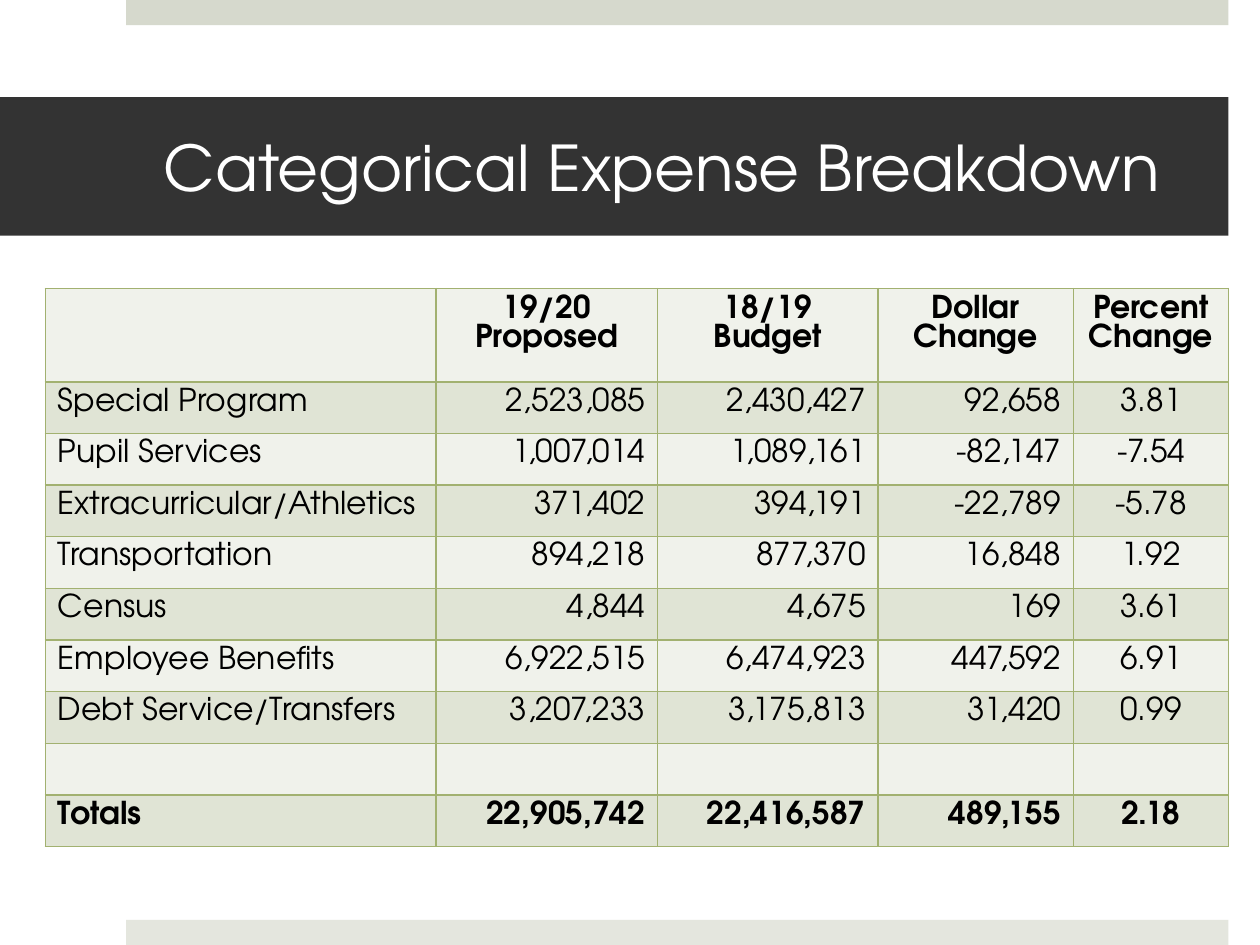
"""Build the categorical expense breakdown slide."""
from dataclasses import dataclass

from lxml import etree
from pptx import Presentation
from pptx.dml.color import RGBColor
from pptx.enum.shapes import MSO_SHAPE
from pptx.enum.text import MSO_ANCHOR, MSO_AUTO_SIZE, PP_ALIGN
from pptx.oxml.ns import qn
from pptx.util import Inches, Pt

TITLE = "Categorical Expense Breakdown"
EXPENSES = [
    ("", "19/20 Proposed", "18/19 Budget", "Dollar Change", "Percent Change"),
    ("Special Program", "2,523,085", "2,430,427", "92,658", "3.81"),
    ("Pupil Services", "1,007,014", "1,089,161", "-82,147", "-7.54"),
    ("Extracurricular/Athletics", "371,402", "394,191", "-22,789", "-5.78"),
    ("Transportation", "894,218", "877,370", "16,848", "1.92"),
    ("Census", "4,844", "4,675", "169", "3.61"),
    ("Employee Benefits", "6,922,515", "6,474,923", "447,592", "6.91"),
    ("Debt Service/Transfers", "3,207,233", "3,175,813", "31,420", "0.99"),
    ("", "", "", "", ""),
    ("Totals", "22,905,742", "22,416,587", "489,155", "2.18"),
]
COLUMN_WIDTHS = (3.1, 1.76, 1.75, 1.55, 1.23)
HEADER_HEIGHT, ROW_HEIGHT = 0.74, 0.41
ALIGNMENTS = (PP_ALIGN.LEFT,) + (PP_ALIGN.RIGHT,) * 3 + (PP_ALIGN.CENTER,)


@dataclass(frozen=True)
class Theme:
    font: str = "TeX Gyre Adventor"
    title_size: float = 36
    table_size: float = 18
    table_leading: float = 16.6
    title_text: str = "FFFFFF"
    table_text: str = "000000"
    title_band: str = "333333"
    top_bar: str = "D6D9CD"
    bottom_bar: str = "E4E6DE"
    row_fills: tuple = ("F0F2EB", "E0E4D5")
    border: str = "A2B170"
    border_width: float = 1


THEME = Theme()


def paint(target, color):
    target.fill.solid()
    target.fill.fore_color.rgb = RGBColor.from_string(color)


def style(paragraph, size, color, alignment, bold=False):
    paragraph.alignment = alignment
    font = paragraph.font
    font.name, font.size, font.bold = THEME.font, Pt(size), bold
    font.color.rgb = RGBColor.from_string(color)


def add_bar(slide, top, color):
    bar = slide.shapes.add_shape(
        MSO_SHAPE.RECTANGLE, Inches(1), Inches(top), Inches(8.75), Inches(0.2))
    bar.shadow.inherit = False
    paint(bar, color)
    bar.line.fill.background()


def set_title(title):
    title.left, title.top = Inches(0), Inches(0.77)
    title.width, title.height = Inches(9.75), Inches(1.1)
    paint(title, THEME.title_band)
    frame = title.text_frame
    frame.text = TITLE
    frame.auto_size = MSO_AUTO_SIZE.NONE
    frame.word_wrap = True
    frame.vertical_anchor = MSO_ANCHOR.MIDDLE
    frame.margin_left, frame.margin_right = Inches(1.3), Inches(0.3)
    frame.margin_top = frame.margin_bottom = Inches(0.05)
    style(frame.paragraphs[0], THEME.title_size, THEME.title_text, PP_ALIGN.LEFT)


def add_borders(cell):
    properties = cell._tc.get_or_add_tcPr()
    for position, side in enumerate(("lnL", "lnR", "lnT", "lnB")):
        line = etree.Element(qn(f"a:{side}"), w=str(Pt(THEME.border_width)))
        solid = etree.SubElement(line, qn("a:solidFill"))
        etree.SubElement(solid, qn("a:srgbClr"), val=THEME.border)
        properties.insert(position, line)


def add_expense_table(slide):
    row_heights = [HEADER_HEIGHT] + [ROW_HEIGHT] * (len(EXPENSES) - 1)
    table = slide.shapes.add_table(
        len(EXPENSES), len(COLUMN_WIDTHS), Inches(0.36), Inches(2.29),
        Inches(sum(COLUMN_WIDTHS)), Inches(sum(row_heights))).table
    table.first_row = table.horz_banding = False
    for column, width in zip(table.columns, COLUMN_WIDTHS):
        column.width = Inches(width)
    for r, (expense, height) in enumerate(zip(EXPENSES, row_heights)):
        table.rows[r].height = Inches(height)
        bold = r in (0, len(EXPENSES) - 1)
        for c, value in enumerate(expense):
            cell = table.cell(r, c)
            cell.text = value
            paint(cell, THEME.row_fills[r % 2])
            add_borders(cell)
            paragraph = cell.text_frame.paragraphs[0]
            paragraph.line_spacing = Pt(THEME.table_leading)
            alignment = PP_ALIGN.CENTER if r == 0 else ALIGNMENTS[c]
            style(paragraph, THEME.table_size, THEME.table_text, alignment, bold)


def main():
    presentation = Presentation()
    presentation.slide_width, presentation.slide_height = Inches(10), Inches(7.5)
    slide = presentation.slides.add_slide(presentation.slide_layouts[5])
    add_bar(slide, 0, THEME.top_bar)
    add_bar(slide, 7.3, THEME.bottom_bar)
    set_title(slide.shapes.title)
    add_expense_table(slide)
    presentation.save("out.pptx")


if __name__ == "__main__":
    main()
